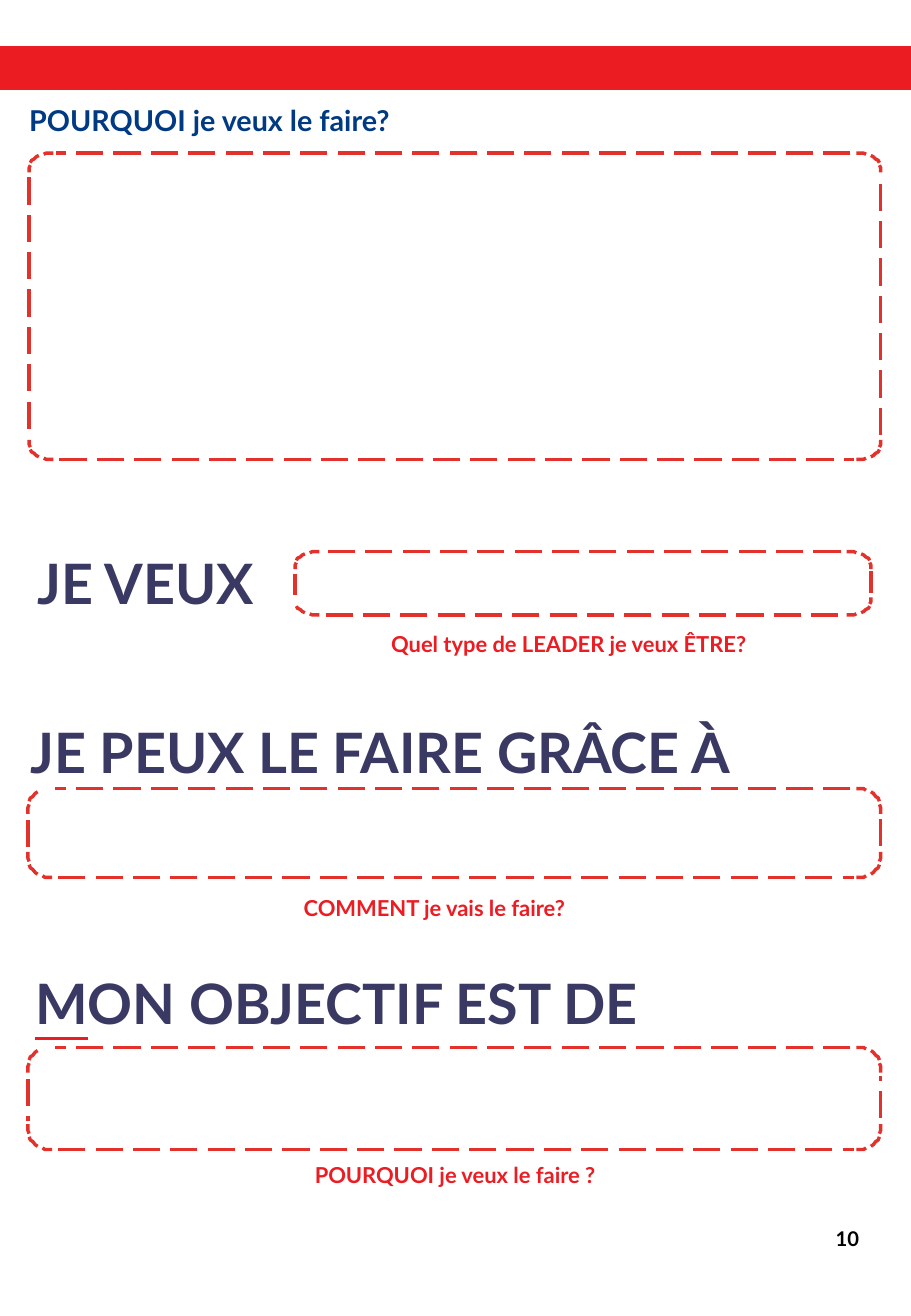
import pptx
import pptx.util
import pptx.dml.color
import pptx.enum.dml
import pptx.enum.shapes
import pptx.enum.text
import pptx.oxml

EMU_PER_PX = 9144  # 100 px to the inch
NAVY, BLUE, RED, DASH_RED, BLACK = "393964", "003A82", "EC1C23", "E3312B", "000000"
ALIGN = pptx.enum.text.PP_ALIGN

# Corner strokes as (x, y) steps away from the frame's corner
CORNER_ARC = [(8, 2), (6, 3), (4, 5), (2, 6), (1, 8)]
CORNER_STUBS = {
    "horizontal": [(12, 1), (14, 0), (20, 0)],
    "vertical": [(1, 10), (0, 12), (0, 16)],
}


def px(length):
    return pptx.util.Emu(round(length * EMU_PER_PX))


def color(hex_string):
    return pptx.dml.color.RGBColor.from_string(hex_string)


class Worksheet:
    font_name = "Lato"
    line_width = pptx.util.Pt(2)

    def __init__(self, width, height):
        self.presentation = pptx.Presentation()
        self.presentation.slide_width = px(width)
        self.presentation.slide_height = px(height)
        layout = self.presentation.slide_layouts.get_by_name("Title Only")
        self.slide = self.presentation.slides.add_slide(layout)

    def band(self, left, top, width, height, fill):
        shape = self.slide.shapes.add_shape(
            pptx.enum.shapes.MSO_SHAPE.RECTANGLE, px(left), px(top), px(width), px(height))
        shape.shadow.inherit = False
        shape.fill.solid()
        shape.fill.fore_color.rgb = color(fill)
        shape.line.fill.background()

    def fill_text(self, shape, text, size, text_color, align=ALIGN.LEFT):
        frame = shape.text_frame
        frame.word_wrap = True
        frame.auto_size = pptx.enum.text.MSO_AUTO_SIZE.NONE
        frame.vertical_anchor = pptx.enum.text.MSO_ANCHOR.TOP
        frame.margin_left = frame.margin_right = frame.margin_bottom = 0
        frame.margin_top = px(1)
        paragraph = frame.paragraphs[0]
        paragraph.alignment = align
        paragraph.space_before = pptx.util.Pt(1)
        paragraph.font.name = self.font_name
        paragraph.font.size = pptx.util.Pt(size)
        paragraph.font.bold = True
        paragraph.font.color.rgb = color(text_color)
        paragraph.add_run().text = text
        return paragraph

    def title(self, left, top, width, height, text, size, text_color):
        shape = self.slide.shapes.title
        shape.left, shape.top, shape.width, shape.height = map(px, (left, top, width, height))
        self.fill_text(shape, text, size, text_color)

    def text(self, left, top, width, height, text, size, text_color, align=ALIGN.LEFT):
        shape = self.slide.shapes.add_textbox(px(left), px(top), px(width), px(height))
        return self.fill_text(shape, text, size, text_color, align)

    def underline(self, run, line_color):
        run.font.underline = True
        run.font._element.append(pptx.oxml.parse_xml(
            '<a:uFill xmlns:a="http://schemas.openxmlformats.org/drawingml/2006/main">'
            f'<a:solidFill><a:srgbClr val="{line_color}"/></a:solidFill></a:uFill>'))

    def style_line(self, shape):
        shape.line.color.rgb = color(DASH_RED)
        shape.line.width = self.line_width

    def dashed_side(self, shapes, start, end):
        connector = shapes.add_connector(
            pptx.enum.shapes.MSO_CONNECTOR.STRAIGHT, *map(px, start + end))
        self.style_line(connector)
        connector.line.dash_style = pptx.enum.dml.MSO_LINE.LONG_DASH
        connector._element.spPr.append(pptx.oxml.parse_xml(
            '<a:effectLst xmlns:a="http://schemas.openxmlformats.org/drawingml/2006/main"/>'))

    def stroke(self, shapes, points):
        start, *others = [(px(x), px(y)) for x, y in points]
        builder = shapes.build_freeform(*start)
        builder.add_line_segments(others, close=False)
        shape = builder.convert_to_shape()
        shape.shadow.inherit = False
        shape.fill.background()
        self.style_line(shape)

    def answer_frame(self, left, top, right, bottom, rise, missing=None):
        """Dashed round frame; rise stretches its corners, missing is a stub left out."""
        shapes = self.slide.shapes.add_group_shape().shapes

        # Sides run anticlockwise and start further from the corner than they end
        begin_x, finish_x = 25, 22
        begin_y, finish_y = 20 * rise, 18 * rise
        self.dashed_side(shapes, (right - begin_x, top), (left + finish_x, top))
        self.dashed_side(shapes, (left, top + begin_y), (left, bottom - finish_y))
        self.dashed_side(shapes, (left + begin_x, bottom), (right - finish_x, bottom))
        self.dashed_side(shapes, (right, bottom - begin_y), (right, top + finish_y))

        # Corners mirror one set of strokes
        for x, x_sign in ((left, 1), (right, -1)):
            for y, y_sign in ((top, 1), (bottom, -1)):
                strokes = [CORNER_ARC] + [
                    steps for direction, steps in CORNER_STUBS.items()
                    if (x, y, direction) != missing]
                for steps in strokes:
                    self.stroke(shapes, [
                        (x + x_sign * dx, y + y_sign * dy * rise) for dx, dy in steps])


def main():
    sheet = Worksheet(750, 1083)

    # Header band and first question
    sheet.band(0, 38, 750, 36, RED)
    sheet.text(24, 84, 411, 30, "POURQUOI je veux le faire?", 17, BLUE)

    # Headings
    sheet.title(31, 451, 200, 57, "JE VEUX", 33, NAVY)
    sheet.text(25, 590, 654, 57, "JE PEUX LE FAIRE GRÂCE À", 33, NAVY)
    goal = sheet.text(29, 796, 556, 58, "M", 33, NAVY)
    sheet.underline(goal.runs[0], RED)
    goal.add_run().text = "ON OBJECTIF EST DE"

    # Guiding questions
    sheet.text(322, 518, 318, 23, "Quel type de LEADER je veux ÊTRE?", 13, RED)
    sheet.text(250, 735, 249, 23, "COMMENT je vais le faire?", 13, RED)
    sheet.text(222, 955, 305, 23, "POURQUOI je veux le faire ?", 13, RED, ALIGN.CENTER)

    # Answer frames
    sheet.answer_frame(24, 126, 725, 378, 1)
    sheet.answer_frame(243, 454, 717, 506, 0.9, missing=(243, 506, "vertical"))
    for top, bottom in ((649, 722), (862, 946)):
        sheet.answer_frame(23, top, 725, bottom, 1.3, missing=(23, top, "horizontal"))

    # Page number
    sheet.text(688, 1008, 32, 20, "10", 12, BLACK)

    sheet.presentation.save("out.pptx")


if __name__ == "__main__":
    main()
